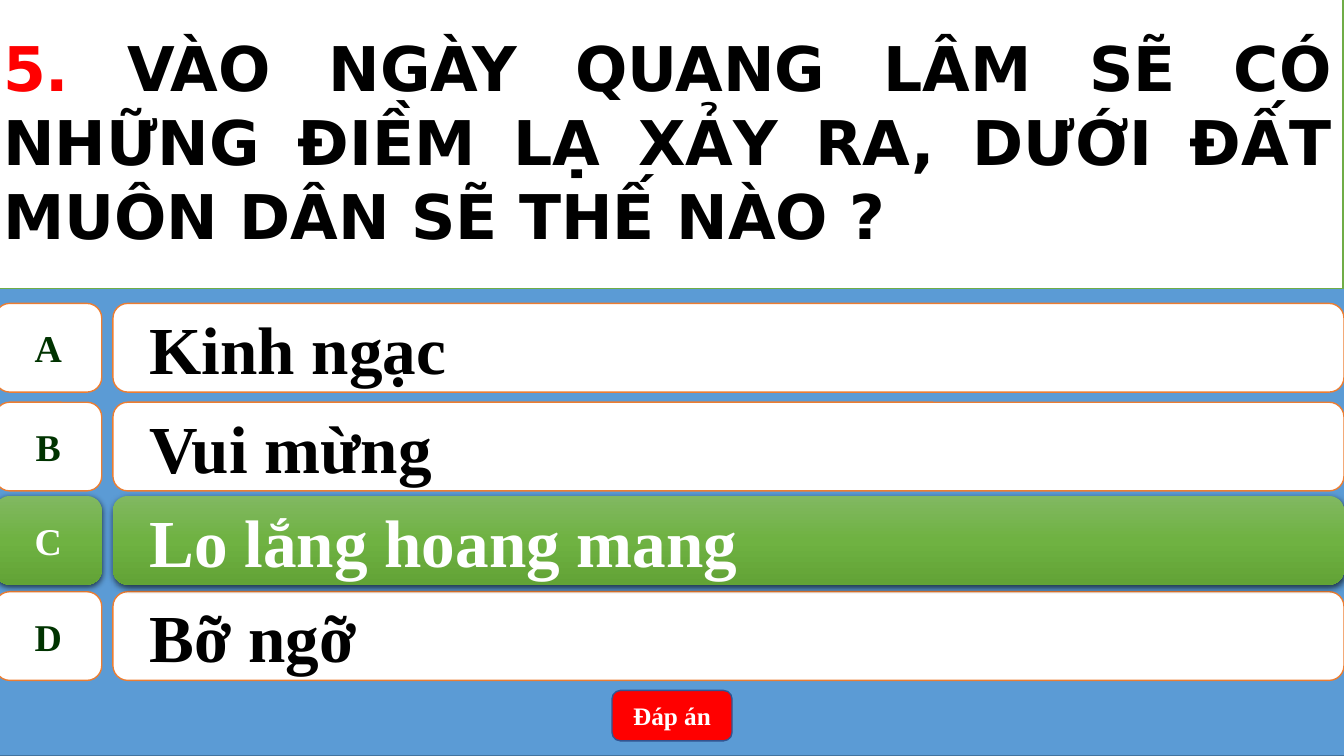
import copy
from dataclasses import dataclass

import pptx
import pptx.dml.color
import pptx.enum.shapes
import pptx.enum.text
import pptx.oxml
import pptx.oxml.ns
import pptx.util

Inches = pptx.util.Inches
Kind = pptx.enum.shapes.MSO_SHAPE
Align = pptx.enum.text.PP_ALIGN
qn = pptx.oxml.ns.qn


@dataclass(frozen=True)
class Theme:
    serif: str = "Times New Roman"
    sans: str = "DejaVu Sans"
    blue: str = "5B9BD5"
    edge: str = "43739E"
    white: str = "FFFFFF"
    black: str = "000000"
    orange: str = "ED7D31"
    forest: str = "003300"
    green: str = "70AD47"
    red: str = "FF0000"
    navy: str = "325491"
    glow: tuple = ("81B861", "6FB242", "62A336")
    ask: int = 44
    reply: int = 48
    mark: int = 27
    label: int = 18


THEME = Theme()
SHADOW = (
    '<a:outerShdw xmlns:a="http://schemas.openxmlformats.org/drawingml/2006/main"'
    ' blurRad="57150" dist="19050" dir="5400000" algn="ctr" rotWithShape="0">'
    '<a:srgbClr val="000000"><a:alpha val="63000"/></a:srgbClr></a:outerShdw>'
)


def rgb(code):
    return pptx.dml.color.RGBColor.from_string(code)


def write(shape, runs, size, font=THEME.serif, align=Align.CENTER, wrap=True,
          indent=None):
    """Fill a shape with bold runs given as (text, colour) pairs."""
    frame = shape.text_frame
    frame.word_wrap = wrap
    frame.auto_size = pptx.enum.text.MSO_AUTO_SIZE.NONE
    frame.vertical_anchor = pptx.enum.text.MSO_ANCHOR.MIDDLE
    para = frame.paragraphs[0]
    para.alignment = align
    if indent:
        para.level = 1
        props = para._p.get_or_add_pPr()
        props.set("marL", str(Inches(indent[0])))
        props.set("indent", str(Inches(indent[1])))
    for text, color in runs:
        run = para.add_run()
        run.text = text
        run.font.name = font
        run.font.size = pptx.util.Pt(size)
        run.font.bold = True
        run.font.color.rgb = rgb(color)


def paint(shape, fill, line):
    shape.fill.solid()
    shape.fill.fore_color.rgb = rgb(fill)
    shape.line.color.rgb = rgb(line)
    shape.line.width = pptx.util.Pt(1)


def panel(slide, kind, box, fill=None, line=None):
    shape = slide.shapes.add_shape(kind, *map(Inches, box))
    shape.shadow.inherit = False
    if fill:
        paint(shape, fill, line)
    else:
        shine(shape)
    return shape


def shine(shape):
    """Green gradient and soft shadow of the right answer."""
    fill = shape.fill
    fill.gradient()
    fill.gradient_angle = 270
    props = shape.element.spPr
    stops = props.find(".//" + qn("a:gsLst"))
    stops.insert(1, copy.deepcopy(stops[0]))
    for stop, color, place in zip(fill.gradient_stops, THEME.glow, (0, 0.5, 1)):
        stop.color.rgb = rgb(color)
        stop.position = place
    shape.line.fill.background()
    props.find(qn("a:effectLst")).append(pptx.oxml.parse_xml(SHADOW))


def answer(slide, box, mark, text, right=False):
    """Letter tile and answer bar side by side."""
    left, top, width, height = box
    tile, gap = 1.06, 0.11
    look = {} if right else {"fill": THEME.white, "line": THEME.orange}
    badge = panel(slide, Kind.FLOWCHART_ALTERNATE_PROCESS,
                  (left, top, tile, height), **look)
    write(badge, [(mark, THEME.white if right else THEME.forest)],
          THEME.mark, wrap=False)
    start = tile + gap
    bar = panel(slide, Kind.ROUNDED_RECTANGLE,
                (left + start, top, width - start, height), **look)
    write(bar, [(text, THEME.white if right else THEME.black)], THEME.reply,
          align=Align.LEFT, indent=(0.5, -0.28))


def button(slide, box, text):
    shape = panel(slide, Kind.ROUNDED_RECTANGLE, box, THEME.red, THEME.navy)
    write(shape, [(text, THEME.white)], THEME.label)


def question(slide, box, number, text):
    title = slide.shapes.title
    title.left, title.top, title.width, title.height = map(Inches, box)
    paint(title, THEME.white, THEME.green)
    write(title, [(number, THEME.red), (text, THEME.black)], THEME.ask,
          font=THEME.sans, align=Align.JUSTIFY)
    # Bring the question to the front
    title.element.getparent().append(title.element)


def main():
    deck = pptx.Presentation()
    deck.slide_width, deck.slide_height = Inches(13.33), Inches(7.5)
    slide = deck.slides.add_slide(deck.slide_layouts[5])

    # Backdrop
    panel(slide, Kind.RECTANGLE, (-0.05, 0, 13.39, 7.5), THEME.blue, THEME.edge)

    # Answers
    rows = [
        (3.01, "A", "Kinh ngạc", False),
        (3.99, "B", "Vui mừng", False),
        (5.87, "D", "Bỡ ngỡ", False),
        (4.92, "C", "Lo lắng hoang mang", True),
    ]
    for top, mark, text, right in rows:
        answer(slide, (-0.05, top, 13.38, 0.88), mark, text, right)

    # Button and question
    button(slide, (6.07, 6.85, 1.19, 0.5), "Đáp án")
    question(slide, (-0.07, -0.07, 13.39, 2.93), "5. ",
             "VÀO NGÀY QUANG LÂM SẼ CÓ NHỮNG ĐIỀM LẠ XẢY RA, "
             "DƯỚI ĐẤT MUÔN DÂN SẼ THẾ NÀO ?")
    deck.save("out.pptx")


if __name__ == "__main__":
    main()
